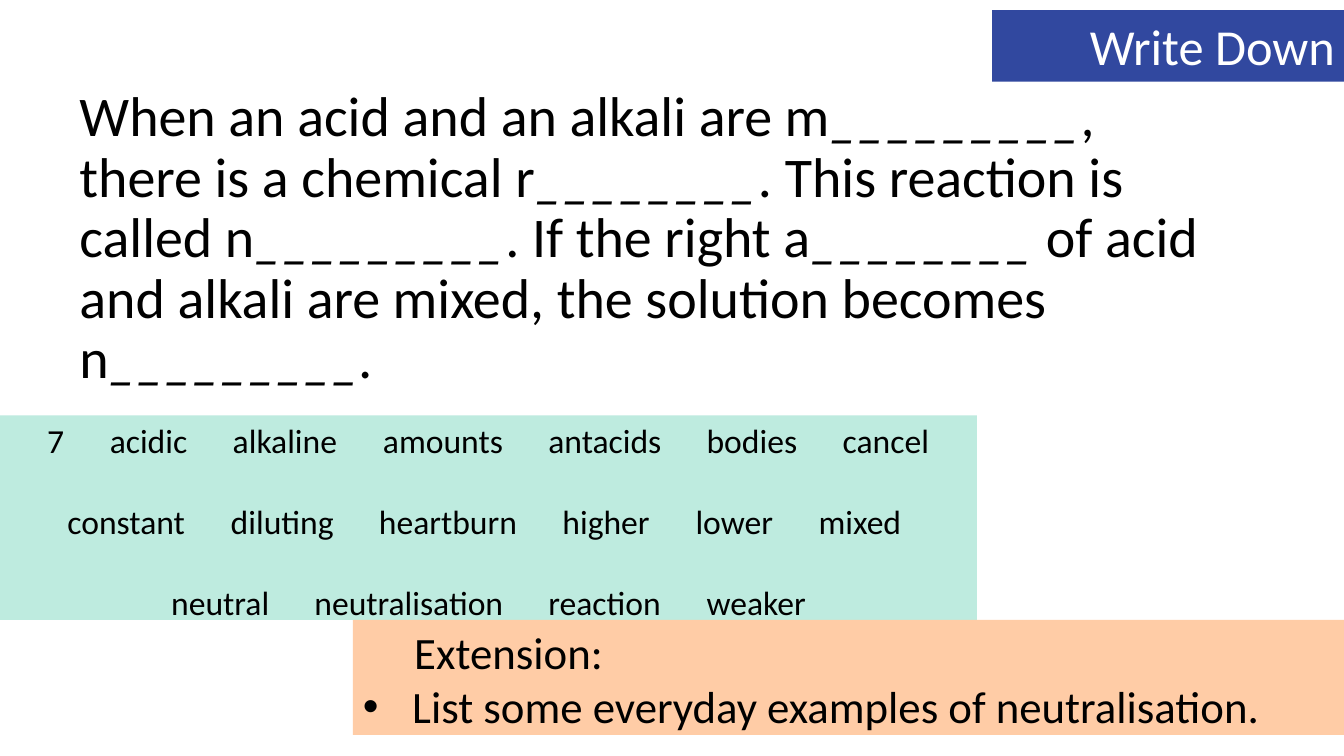
from lxml import etree
from pptx import Presentation
from pptx.dml.color import RGBColor
from pptx.enum.shapes import MSO_SHAPE as Shape
from pptx.enum.text import MSO_ANCHOR as Anchor, PP_ALIGN as Align
from pptx.oxml.ns import qn
from pptx.util import Inches, Pt

COLOURS = {"text": "000000", "white": "FFFFFF", "banner": "31489F",
           "words": "BEEBDF", "extension": "FFCCA6"}
FONT = "Calibri"
INSET = 0.1

# Sentence parts alternate between plain text and italic blanks
SENTENCE = ["When an acid and an alkali are m", "_________",
            ", there is a chemical r", "________",
            ". This reaction is called n", "_________",
            ". If the right a", "________",
            " of acid and alkali are mixed, the solution becomes n",
            "_________."]

# Each word with its left edge in inches from the box
WORD_ROWS = [
    [("7", 0.47), ("acidic", 1.09), ("alkaline", 2.31), ("amounts", 3.8),
     ("antacids", 5.44), ("bodies", 7.01), ("cancel", 8.36)],
    [("constant", 0.67), ("diluting", 2.29), ("heartburn", 3.76),
     ("higher", 5.58), ("lower", 6.9), ("mixed", 8.12)],
    [("neutral", 1.7), ("neutralisation", 3.12), ("reaction", 5.44),
     ("weaker", 7.01)],
]


def colour(name):
    return RGBColor.from_string(COLOURS[name])


def add_span(para, text, size, color="text", italic=False):
    span = para.add_run()
    span.text = text
    span.font.name = FONT
    span.font.size = Pt(size)
    span.font.italic = italic
    span.font.color.rgb = colour(color)


def next_para(frame, index, align=Align.LEFT):
    para = frame.paragraphs[0] if index == 0 else frame.add_paragraph()
    para.alignment = align
    return para


def filled_box(page, box, fill):
    panel = page.shapes.add_shape(Shape.RECTANGLE, *map(Inches, box))
    panel.shadow.inherit = False
    panel.fill.solid()
    panel.fill.fore_color.rgb = colour(fill)
    panel.line.fill.background()
    frame = panel.text_frame
    frame.word_wrap = True
    frame.vertical_anchor = Anchor.TOP
    return frame


def set_tabs(para, positions):
    tabs = etree.SubElement(para._p.get_or_add_pPr(), qn("a:tabLst"))
    for position in positions:
        etree.SubElement(tabs, qn("a:tab"), algn="l",
                         pos=str(Inches(position - INSET)))


def set_indent(para, margin, bullet=None):
    props = para._p.get_or_add_pPr()
    props.set("marL", str(Inches(margin)))
    if bullet:
        props.set("indent", str(-Inches(margin)))
        etree.SubElement(props, qn("a:buFont"), typeface="Arial")
        etree.SubElement(props, qn("a:buChar"), char=bullet)


def add_sentence(page, box):
    frame = page.shapes.add_textbox(*map(Inches, box)).text_frame
    frame.word_wrap = True
    para = next_para(frame, 0)
    para.line_spacing = 0.9
    para.space_before = Pt(10)
    for index, part in enumerate(SENTENCE):
        add_span(para, part, 40, italic=index % 2 == 1)


def add_word_bank(page, box):
    frame = filled_box(page, box, "words")
    for index, row in enumerate(WORD_ROWS):
        para = next_para(frame, index)
        if index:
            para.space_before = Pt(29)
        set_tabs(para, [left for _, left in row])
        add_span(para, "".join("\t" + word for word, _ in row), 24)


def add_banner(page, box):
    frame = filled_box(page, box, "banner")
    add_span(next_para(frame, 0, Align.RIGHT), "Write Down", 36, color="white")


def add_extension(page, box):
    frame = filled_box(page, box, "extension")
    heading = next_para(frame, 0)
    set_indent(heading, 0.51)
    add_span(heading, "Extension:", 32)
    task = next_para(frame, 1)
    set_indent(task, 0.49, bullet="•")
    add_span(task, "List some everyday examples of neutralisation.", 32)


def main():
    deck = Presentation()
    deck.slide_width, deck.slide_height = Inches(13.33), Inches(7.5)
    page = deck.slides.add_slide(deck.slide_layouts[6])
    add_sentence(page, (0.69, 0.83, 11.5, 4.76))
    add_word_bank(page, (0, 4.12, 9.69, 2.03))
    add_banner(page, (9.84, 0.1, 3.5, 0.71))
    add_extension(page, (3.5, 6.15, 9.83, 1.14))
    deck.save("out.pptx")


if __name__ == "__main__":
    main()
